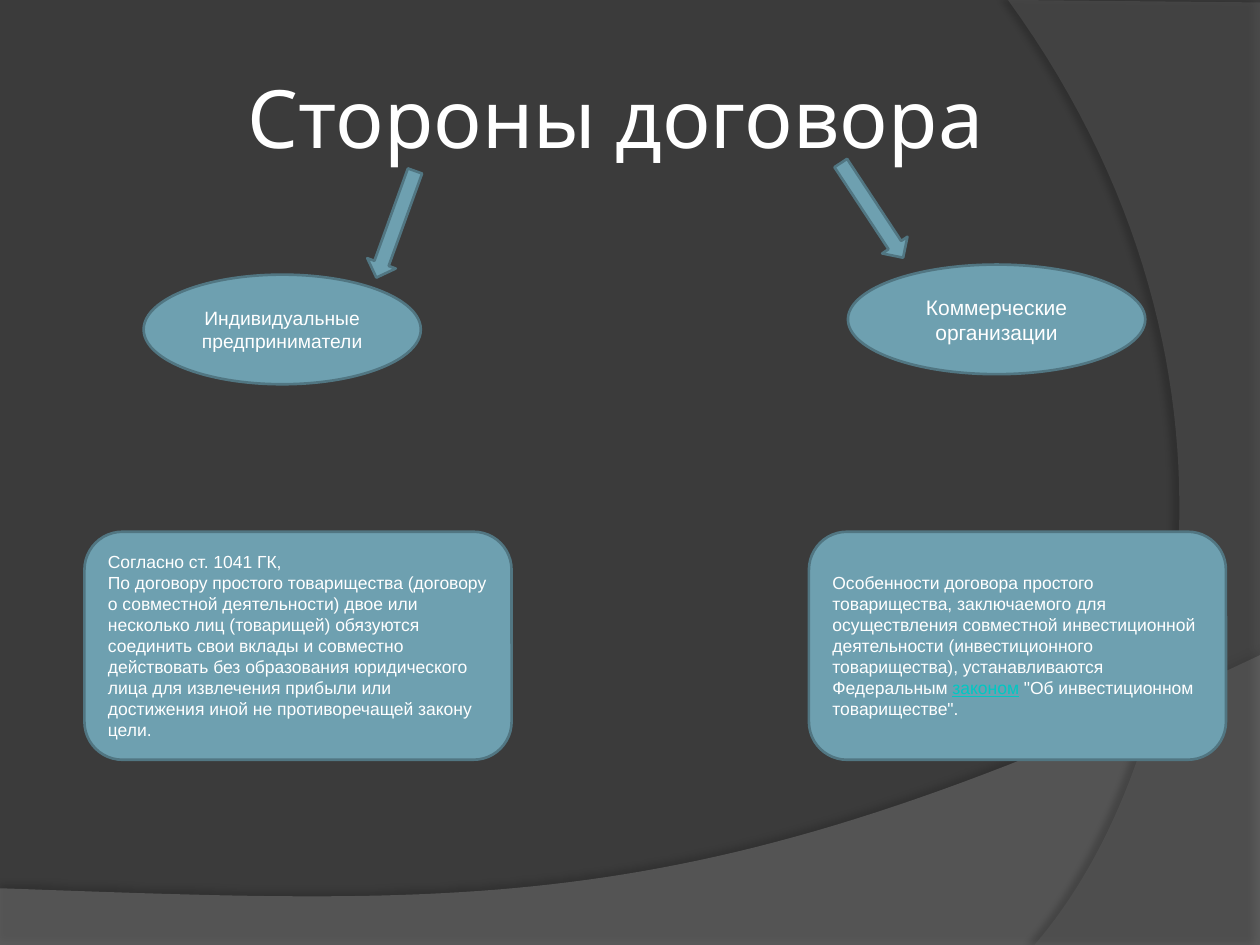
"""Build the slide on the parties to a simple partnership agreement."""
from dataclasses import dataclass

import lxml.etree
import pptx
import pptx.dml.color
import pptx.enum.shapes
import pptx.enum.text
import pptx.oxml
import pptx.oxml.ns
import pptx.util

Inches = pptx.util.Inches
Pt = pptx.util.Pt
RGBColor = pptx.dml.color.RGBColor
Preset = pptx.enum.shapes.MSO_SHAPE
Align = pptx.enum.text.PP_ALIGN
qn = pptx.oxml.ns.qn

BACKGROUND = RGBColor(0x3B, 0x3B, 0x3B)
HILL = RGBColor(0x7F, 0x7F, 0x7F)
ARC = RGBColor(0x5E, 0x5E, 0x5E)
SHADOW = RGBColor(0, 0, 0)
TEAL = RGBColor(0x6E, 0xA0, 0xB0)
TEAL_DARK = RGBColor(0x51, 0x76, 0x82)
LINK = RGBColor(0x00, 0xC8, 0xC3)
WHITE = RGBColor(0xFF, 0xFF, 0xFF)

Point = tuple[float, float]


@dataclass(frozen=True)
class Run:
    text: str
    color: RGBColor = WHITE
    underline: bool = False


@dataclass(frozen=True)
class Block:
    preset: Preset
    left: float
    top: float
    width: float
    height: float
    paragraphs: tuple[tuple[Run, ...], ...] = ()
    size: float = 10
    align: Align = Align.LEFT
    rotation: float = 0


@dataclass(frozen=True)
class Wave:
    curve: tuple[Point, Point, Point, Point]
    corners: tuple[Point, ...]
    color: RGBColor
    opacity: int
    shadow_opacity: int
    shadow_distance: float
    shadow_angle: int


WAVES = (
    Wave(((10, 5.2), (5.59, 7.29), (3.91, 7.19), (0, 7.05)),
         ((0, 7.5), (10, 7.5)), HILL, 45, 35, 3.5, 270),
    Wave(((8.21, 7.5), (9.35, 6.19), (10.18, 3), (8, 0)),
         ((10, 0.02), (10, 7.5)), ARC, 40, 45, 4, 180),
)

BLOCKS = (
    Block(Preset.ROUNDED_RECTANGLE, 0.67, 4.22, 3.39, 1.81, (
        (Run("Согласно ст. 1041 ГК,"),),
        (Run("По договору простого товарищества (договору о совместной "
             "деятельности) двое или несколько лиц (товарищей) обязуются "
             "соединить свои вклады и совместно действовать без образования "
             "юридического лица для извлечения прибыли или достижения иной "
             "не противоречащей закону цели."),),
    )),
    Block(Preset.OVAL, 1.14, 2.18, 2.2, 0.87,
          ((Run("Индивидуальные предприниматели"),),), 11, Align.CENTER),
    Block(Preset.RIGHT_ARROW, 2.69, 1.66, 0.9, 0.24, rotation=109.9),
    Block(Preset.ROUNDED_RECTANGLE, 6.42, 4.22, 3.31, 1.81, ((
        Run("Особенности договора простого товарищества, заключаемого для "
            "осуществления совместной инвестиционной деятельности "
            "(инвестиционного товарищества), устанавливаются Федеральным "),
        Run("законом", LINK, True),
        Run(" \"Об инвестиционном товариществе\"."),
    ),)),
    Block(Preset.OVAL, 6.73, 2.1, 2.36, 0.87,
          ((Run("Коммерческие организации"),),), 12, Align.CENTER),
    Block(Preset.RIGHT_ARROW, 6.47, 1.55, 0.9, 0.24, rotation=56.6),
)


def bezier(curve: tuple[Point, Point, Point, Point], steps: int = 60) -> list[Point]:
    """Return evenly sampled points of a cubic curve."""
    points = []
    for step in range(steps + 1):
        t = step / steps
        weights = ((1 - t) ** 3, 3 * t * (1 - t) ** 2, 3 * t * t * (1 - t), t ** 3)
        points.append(tuple(sum(w * p[axis] for w, p in zip(weights, curve))
                            for axis in (0, 1)))
    return points


def set_opacity(color_element, percent: int) -> None:
    """Give a colour element an opacity."""
    lxml.etree.SubElement(color_element, qn("a:alpha")).set("val", str(percent * 1000))


def draw_wave(slide, wave: Wave) -> None:
    """Draw a translucent background wave with a soft shadow."""
    outline = [(Inches(x), Inches(y)) for x, y in (*bezier(wave.curve), *wave.corners)]
    builder = slide.shapes.build_freeform(*outline[0])
    builder.add_line_segments(outline[1:], close=True)
    shape = builder.convert_to_shape()
    shape.fill.solid()
    shape.fill.fore_color.rgb = wave.color
    shape.line.fill.background()
    shape.shadow.inherit = False
    properties = shape._element.spPr
    set_opacity(properties.find(qn("a:solidFill"))[0], wave.opacity)
    shadow = lxml.etree.SubElement(properties.find(qn("a:effectLst")), qn("a:outerShdw"))
    shadow.set("blurRad", str(Pt(4)))
    shadow.set("dist", str(Pt(wave.shadow_distance)))
    shadow.set("dir", str(wave.shadow_angle * 60000))
    shadow.set("rotWithShape", "0")
    shadow_color = lxml.etree.SubElement(shadow, qn("a:srgbClr"))
    shadow_color.set("val", str(SHADOW))
    set_opacity(shadow_color, wave.shadow_opacity)


def write_text(shape, paragraphs: tuple[tuple[Run, ...], ...], *, size: float,
               font: str = "Arial", align: Align = Align.LEFT) -> None:
    """Write formatted paragraphs, vertically centred, into a shape."""
    frame = shape.text_frame
    frame.word_wrap = True
    frame.vertical_anchor = pptx.enum.text.MSO_ANCHOR.MIDDLE
    for index, runs in enumerate(paragraphs):
        paragraph = frame.add_paragraph() if index else frame.paragraphs[0]
        paragraph.alignment = align
        for part in runs:
            run = paragraph.add_run()
            run.text = part.text
            run.font.name = font
            run.font.size = Pt(size)
            run.font.color.rgb = part.color
            run.font.underline = part.underline


def draw_block(slide, block: Block) -> None:
    """Draw a teal shape with its text."""
    shape = slide.shapes.add_shape(
        block.preset, Inches(block.left), Inches(block.top),
        Inches(block.width), Inches(block.height))
    shape.rotation = block.rotation
    shape.shadow.inherit = False
    shape.fill.solid()
    shape.fill.fore_color.rgb = TEAL
    shape.line.color.rgb = TEAL_DARK
    shape.line.width = Pt(1.5)
    write_text(shape, block.paragraphs, size=block.size, align=block.align)


def draw_title(slide) -> None:
    """Draw the heading, shifted right by its left inset."""
    title = slide.shapes.add_textbox(Inches(0.5), Inches(0.3), Inches(8.17), Inches(1.25))
    frame = title.text_frame
    frame.margin_left = Inches(0.65)
    frame.margin_right = frame.margin_top = frame.margin_bottom = Inches(0.05)
    write_text(title, ((Run("Стороны договора"),),), size=46, font="Karla",
               align=Align.CENTER)


def main() -> None:
    """Build and save the presentation."""
    presentation = pptx.Presentation()
    presentation.slide_width = Inches(10)
    presentation.slide_height = Inches(7.5)
    slide = presentation.slides.add_slide(presentation.slide_layouts[6])
    slide.background.fill.solid()
    slide.background.fill.fore_color.rgb = BACKGROUND
    for wave in WAVES:
        draw_wave(slide, wave)
    draw_title(slide)
    for block in BLOCKS:
        draw_block(slide, block)
    presentation.save("out.pptx")


if __name__ == "__main__":
    main()
